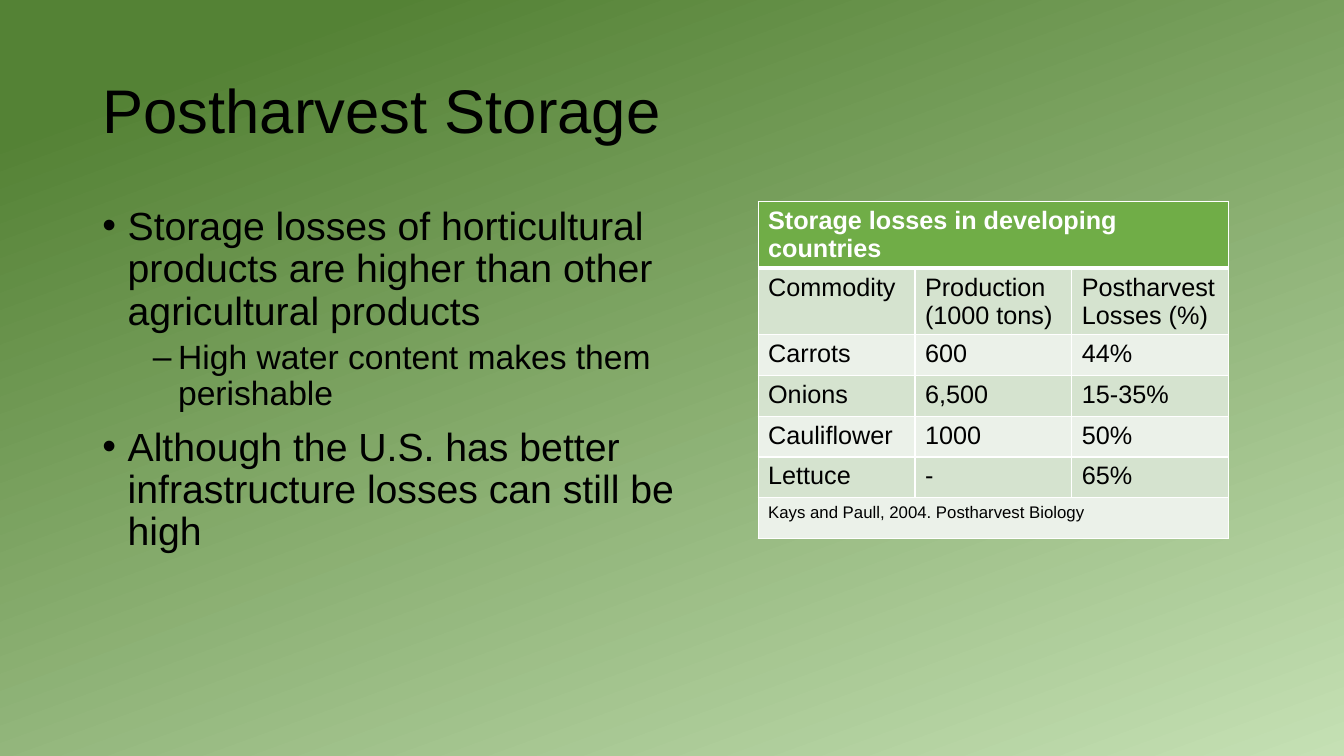
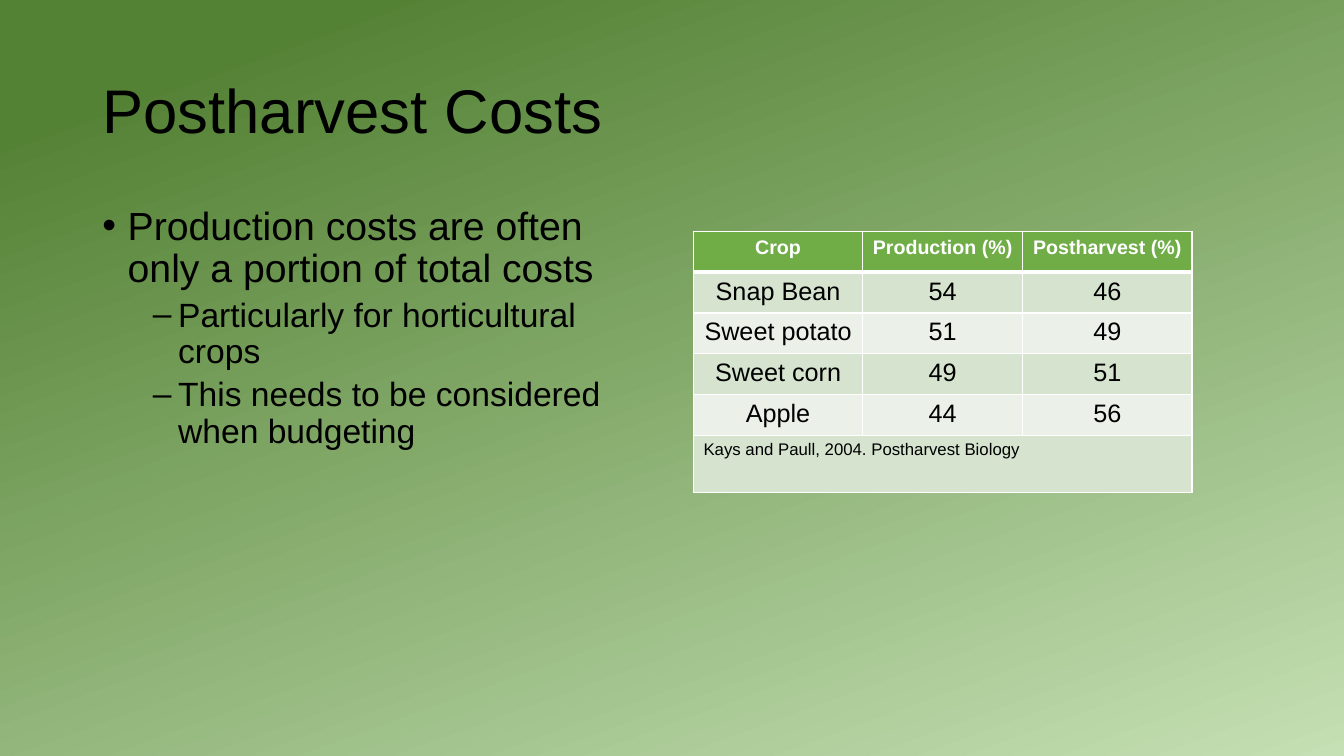
from lxml import etree
from pptx import Presentation
from pptx.dml.color import RGBColor
from pptx.enum.text import MSO_ANCHOR, MSO_AUTO_SIZE, PP_ALIGN
from pptx.oxml.ns import qn
from pptx.util import Inches, Pt

LEFT, CENTER = PP_ALIGN.LEFT, PP_ALIGN.CENTER
MIDDLE, TOP = MSO_ANCHOR.MIDDLE, MSO_ANCHOR.TOP
NO_FIT = MSO_AUTO_SIZE.NONE

FONT = "Arial"
BLACK, WHITE = "000000", "FFFFFF"
DARK, PALE = "548235", "C5E0B4"
HEAD = "70AD47"
BANDS = ["EBF1E9", "D5E3CF"]
SOURCE = "Kays and Paull, 2004. Postharvest Biology"

# A grid of 160 columns and 90 square rows
COLS = 160
ROW = 4.86  # plain table row
EDGE = 11
SIZES = [28, 24]
SPACES = [10, 5]
INDENTS = [0.25, 0.75]

SLIDES = [
    {
        "title": "Postharvest Storage",
        "wide": 79.2,
        "list": [
            (0, "Storage losses of horticultural products are higher than other agricultural products"),
            (1, "High water content makes them perishable"),
            (0, "Although the U.S. has better infrastructure losses can still be high"),
        ],
        "spot": (90.25, 24),
        "cols": [18.68] * 3,
        "tall": {0: 7.9, 1: 7.9},
        "head": 18,
        "align": LEFT,
        "rows": [
            ["Storage losses in developing countries"],
            ["Commodity", "Production (1000 tons)", "Postharvest Losses (%)"],
            ["Carrots", "600", "44%"],
            ["Onions", "6,500", "15-35%"],
            ["Cauliflower", "1000", "50%"],
            ["Lettuce", "-", "65%"],
            [SOURCE],
        ],
    },
    {
        "title": "Postharvest Costs",
        "wide": 62.4,
        "list": [
            (0, "Production costs are often only a portion of total costs"),
            (1, "Particularly for horticultural crops"),
            (1, "This needs to be considered when budgeting"),
        ],
        "spot": (82.55, 27.55),
        "cols": [20.15, 19.05, 20.15],
        "tall": {5: 6.8},
        "head": 14,
        "align": CENTER,
        "rows": [
            ["Crop", "Production (%)", "Postharvest (%)"],
            ["Snap Bean", "54", "46"],
            ["Sweet potato", "51", "49"],
            ["Sweet corn", "49", "51"],
            ["Apple", "44", "56"],
            [SOURCE],
        ],
    },
]


def write(para, text, size, color=BLACK, bold=False, align=LEFT):
    para.text = text
    para.alignment = align
    font = para.font
    font.name, font.size, font.bold = FONT, Pt(size), bold
    font.color.rgb = RGBColor.from_string(color)


def fill_cell(cell, color, top, base):
    """Fill a cell and rule it in white; top and base are line widths."""
    cell.fill.solid()
    cell.fill.fore_color.rgb = RGBColor.from_string(color)
    props = cell._tc.get_or_add_tcPr()
    for spot, (side, width) in enumerate(zip("LRTB", (1, 1, top, base))):
        line = etree.Element(qn("a:ln" + side), w=str(Pt(width)))
        solid = etree.SubElement(line, qn("a:solidFill"))
        etree.SubElement(solid, qn("a:srgbClr"), val=WHITE)
        props.insert(spot, line)


prs = Presentation()
prs.slide_width, prs.slide_height = Inches(13.33), Inches(7.5)
unit = prs.slide_width / COLS

back = prs.slide_master.background.fill
back.gradient()
back.gradient_angle = 290
for stop, place, color in zip(back.gradient_stops, (0.11, 1), (DARK, PALE)):
    stop.position = place
    stop.color.rgb = RGBColor.from_string(color)

for data in SLIDES:
    slide = prs.slides.add_slide(prs.slide_layouts[1])
    title, body = slide.placeholders
    boxes = [(EDGE, 4.8, 138, 17.4), (EDGE, 24, data["wide"], 57.1)]
    for shape, box, anchor in zip((title, body), boxes, (MIDDLE, TOP)):
        shape.left, shape.top, shape.width, shape.height = [int(n * unit) for n in box]
        shape.text_frame.auto_size = NO_FIT
        shape.text_frame.vertical_anchor = anchor

    head = title.text_frame.paragraphs[0]
    write(head, data["title"], 44)
    head.line_spacing = 0.9

    frame = body.text_frame
    for i, (level, text) in enumerate(data["list"]):
        para = frame.add_paragraph() if i else frame.paragraphs[0]
        write(para, text, SIZES[level])
        para.level = level
        para.line_spacing = 0.9
        para.space_before = Pt(SPACES[level] if i else 0)
        props = para._p.get_or_add_pPr()
        props.set("marL", str(Inches(INDENTS[level])))
        props.set("indent", str(Inches(-0.25)))

    rows, cols = data["rows"], data["cols"]
    last = len(rows) - 1
    highs = [data["tall"].get(r, ROW) for r in range(len(rows))]
    area = [int(n * unit) for n in (*data["spot"], sum(cols), sum(highs))]
    table = slide.shapes.add_table(len(rows), len(cols), *area).table
    for col, wide in zip(table.columns, cols):
        col.width = int(wide * unit)
    for r, (row, high) in enumerate(zip(rows, highs)):
        table.rows[r].height = int(high * unit)
        for c in range(len(cols)):
            fill_cell(table.cell(r, c), BANDS[r % 2] if r else HEAD,
                      3 if r == 1 else 1, 1 if r else 3)
        if len(row) == 1:
            table.cell(r, 0).merge(table.cell(r, len(cols) - 1))
        if r == 0:
            style = {"size": data["head"], "color": WHITE, "bold": True, "align": data["align"]}
        elif r == last:
            style = {"size": 12}
        else:
            style = {"size": 18, "align": data["align"]}
        for c, text in enumerate(row):
            write(table.cell(r, c).text_frame.paragraphs[0], text, **style)

prs.save("out.pptx")
